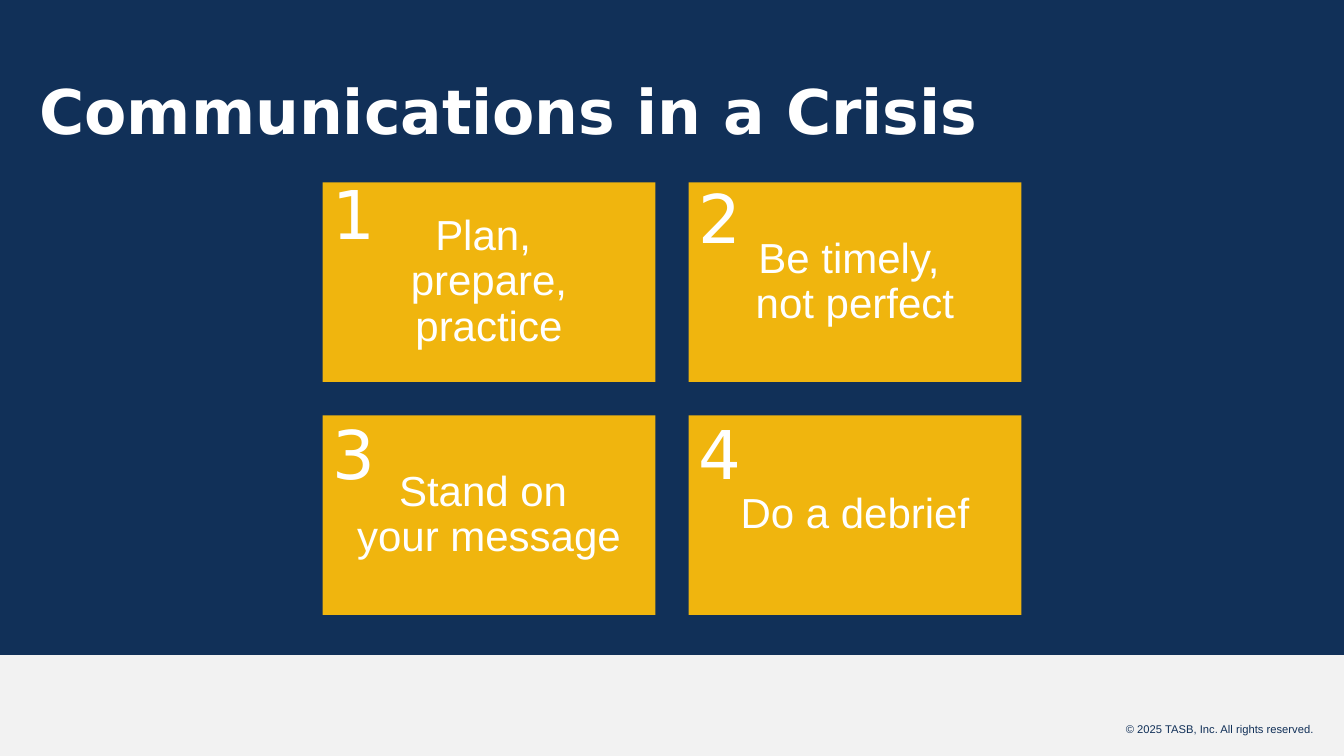
from pptx import Presentation
from pptx import util as u
from pptx.dml.color import RGBColor
from pptx.enum import shapes, text

PX = 9144  # EMU per px, 100 px to the inch
NAVY, GOLD, PALE, WHITE = "113058", "F0B50E", "F2F2F2", "FFFFFF"
BODY_FONT, DISPLAY_FONT = "Arial", "DejaVu Sans"

CARD_LEFT, CARD_TOP = 320, 181
CARD_WIDTH, CARD_HEIGHT = 330, 198
COLUMN_STEP, ROW_STEP = 363, 231

# Lines of each card, and the top of its number
CARDS = [
    (["Plan, ", "prepare, practice"], 166),
    (["Be timely, ", "not perfect"], 170),
    (["Stand on ", "your message"], 404),
    (["Do a debrief"], 404),
]


def px(*lengths):
    return [u.Emu(length * PX) for length in lengths]


def paint(fill, color):
    fill.solid()
    fill.fore_color.rgb = RGBColor.from_string(color)


def write(shape, lines, size, font, color, align=text.PP_ALIGN.LEFT,
          bold=False, spacing=None):
    """Put lines, parted by line breaks, in the shape's one paragraph."""
    paragraph = shape.text_frame.paragraphs[0]
    paragraph.alignment = align
    if spacing:
        paragraph.line_spacing = spacing
    for index, line in enumerate(lines):
        if index:
            paragraph.add_line_break()
        run = paragraph.add_run()
        run.text = line
        run.font.size = u.Pt(size)
        run.font.name = font
        run.font.bold = bold
        run.font.color.rgb = RGBColor.from_string(color)


def add_rectangle(slide, left, top, width, height, color):
    shape = slide.shapes.add_shape(
        shapes.MSO_SHAPE.RECTANGLE, *px(left, top, width, height))
    shape.shadow.inherit = False
    paint(shape.fill, color)
    shape.line.fill.background()
    return shape


def add_label(slide, left, top, width, height, label, size, font, color,
              align=text.PP_ALIGN.LEFT):
    box = slide.shapes.add_textbox(*px(left, top, width, height))
    box.text_frame.word_wrap = True
    box.text_frame.auto_size = text.MSO_AUTO_SIZE.SHAPE_TO_FIT_TEXT
    write(box, [label], size, font, color, align)


def add_title(slide, title):
    shape = slide.shapes.title
    shape.left, shape.top, shape.width, shape.height = px(29, 41, 1381, 145)
    shape.text_frame.vertical_anchor = text.MSO_ANCHOR.MIDDLE
    shape.text_frame.auto_size = text.MSO_AUTO_SIZE.NONE
    write(shape, [title], 44, DISPLAY_FONT, WHITE, bold=True, spacing=0.9)


def add_card(slide, left, top, lines):
    card = add_rectangle(slide, left, top, CARD_WIDTH, CARD_HEIGHT, GOLD)
    frame = card.text_frame
    frame.word_wrap = True
    frame.vertical_anchor = text.MSO_ANCHOR.MIDDLE
    (frame.margin_left, frame.margin_top,
     frame.margin_right, frame.margin_bottom) = px(12, 12, 12, 12)
    write(card, lines, 30, BODY_FONT, WHITE, text.PP_ALIGN.CENTER, spacing=0.9)


def main():
    presentation = Presentation()
    presentation.slide_width, presentation.slide_height = px(1333, 750)
    slide = presentation.slides.add_slide(presentation.slide_layouts[5])
    paint(slide.background.fill, NAVY)

    # Footer band and title
    add_rectangle(slide, 0, 650, 1333, 100, PALE)
    add_label(slide, 1013, 712, 300, 24,
              "© 2025 TASB, Inc. All rights reserved.",
              8, BODY_FONT, NAVY, text.PP_ALIGN.RIGHT)
    add_title(slide, "Communications in a Crisis")

    # Two by two grid of numbered cards
    for index, (lines, number_top) in enumerate(CARDS):
        row, column = divmod(index, 2)
        left = CARD_LEFT + column * COLUMN_STEP
        add_card(slide, left, CARD_TOP + row * ROW_STEP, lines)
        add_label(slide, left, number_top, 617, 91, str(index + 1),
                  48, DISPLAY_FONT, WHITE)

    presentation.save("out.pptx")


if __name__ == "__main__":
    main()
